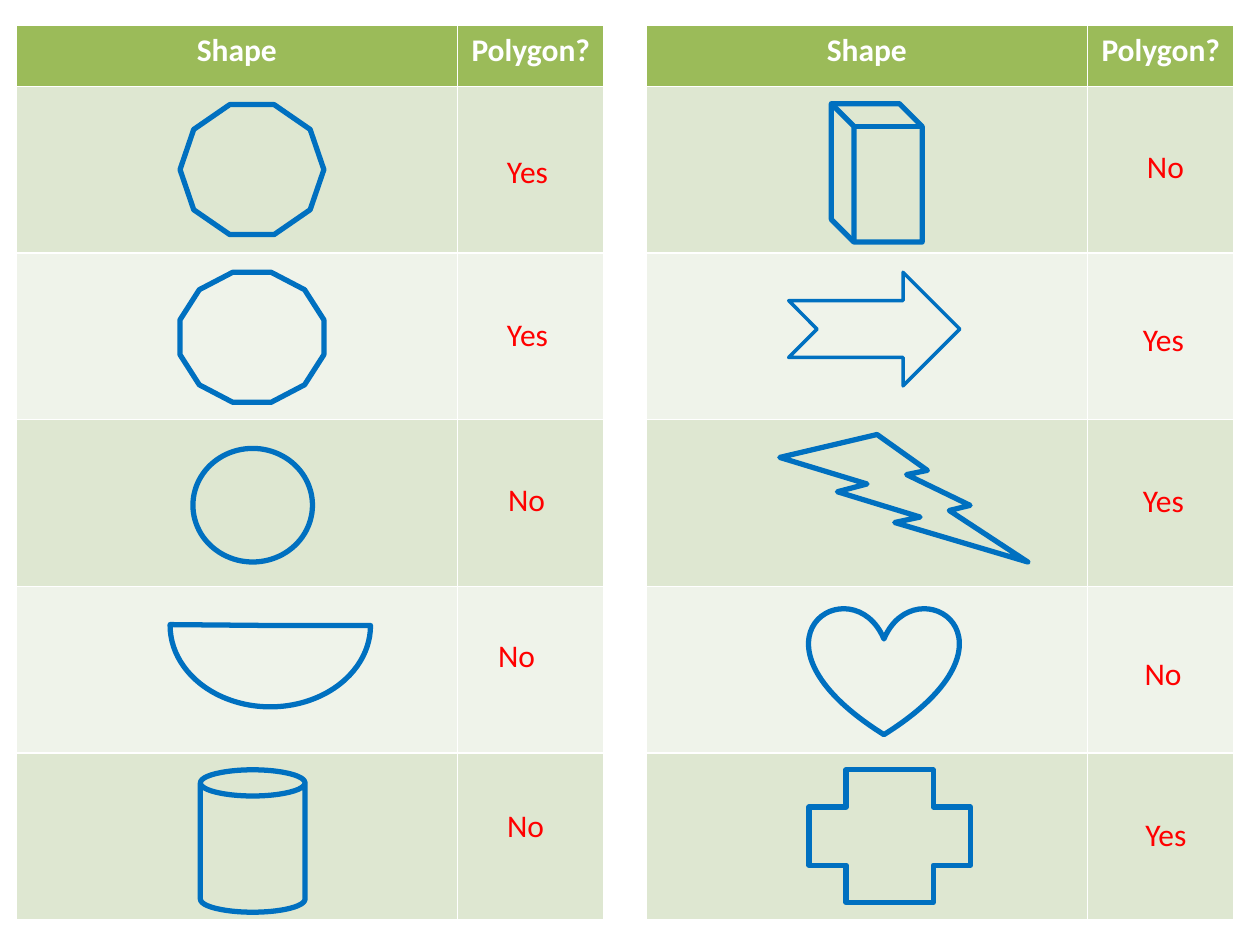
from dataclasses import dataclass

from pptx import Presentation
from pptx.dml.color import RGBColor as Rgb
from pptx.enum.shapes import MSO_SHAPE as Preset
from pptx.enum.text import MSO_AUTO_SIZE as AutoSize, PP_ALIGN as Align
from pptx.slide import Slide
from pptx.util import Cm, Pt


@dataclass(frozen=True)
class Theme:
    font: str = "Calibri"
    text_size: Pt = Pt(18)
    header_fill: Rgb = Rgb(0x9B, 0xBB, 0x59)
    header_text: Rgb = Rgb(0xFF, 0xFF, 0xFF)
    band_fills: tuple = (Rgb(0xDE, 0xE7, 0xD1), Rgb(0xEF, 0xF3, 0xEA))
    outline: Rgb = Rgb(0x00, 0x70, 0xC0)
    answer_text: Rgb = Rgb(0xFF, 0x00, 0x00)


@dataclass(frozen=True)
class Figure:
    """An outlined shape; lengths in centimetres, line in points."""
    preset: Preset
    left: float
    top: float
    width: float
    height: float
    line: float = 3
    rotation: float = 0
    adjustments: tuple = ()


@dataclass(frozen=True)
class Answer:
    """A Yes/No label; lengths in centimetres."""
    text: str
    left: float
    top: float


THEME = Theme()
HEADERS = ("Shape", "Polygon?")
TABLE_LEFTS = (0.33, 13.03)
TABLE_TOP = 0.51
COLUMN_WIDTHS = (8.89, 2.96)
ROW_HEIGHTS = (1.23,) + (3.36,) * 5
ANSWER_WIDTHS = {"Yes": 1.35, "No": 1.27}
ANSWER_HEIGHT = 1.02

FIGURES = (
    # Left table
    Figure(Preset.DECAGON, 3.63, 2.11, 2.9, 2.62),
    Figure(Preset.DODECAGON, 3.63, 5.49, 2.9, 2.62),
    Figure(Preset.OVAL, 3.89, 9.04, 2.41, 2.29),
    Figure(Preset.PIE, 3.43, 10.97, 4.04, 3.28, adjustments=(0, 108.3)),
    Figure(Preset.CAN, 4.04, 15.52, 2.11, 2.87),
    # Right table
    Figure(Preset.CUBE, 16.28, 2.57, 2.79, 1.83, rotation=270),
    Figure(Preset.NOTCHED_RIGHT_ARROW, 15.9, 5.49, 3.45, 2.29, line=2),
    Figure(Preset.LIGHTNING_BOLT, 15.72, 8.76, 5, 2.57),
    Figure(Preset.HEART, 16.31, 12.24, 3.02, 2.57),
    Figure(Preset.CROSS, 16.31, 15.52, 3.25, 2.67, adjustments=(0.28,)),
)

ANSWERS = (
    # Left table
    Answer("Yes", 9.96, 2.95),
    Answer("Yes", 9.96, 6.22),
    Answer("No", 9.98, 9.55),
    Answer("No", 9.78, 12.7),
    Answer("No", 9.96, 16.13),
    # Right table
    Answer("No", 22.86, 2.84),
    Answer("Yes", 22.78, 6.32),
    Answer("Yes", 22.78, 9.58),
    Answer("No", 22.81, 13.06),
    Answer("Yes", 22.83, 16.31),
)


def write_centred(text_frame, text: str, color: Rgb, bold: bool = False) -> None:
    paragraph = text_frame.paragraphs[0]
    paragraph.alignment = Align.CENTER
    run = paragraph.add_run()
    run.text = text
    run.font.name = THEME.font
    run.font.size = THEME.text_size
    run.font.bold = bold
    run.font.color.rgb = color


def draw_table(slide: Slide, left: float) -> None:
    table = slide.shapes.add_table(
        len(ROW_HEIGHTS), len(COLUMN_WIDTHS), Cm(left), Cm(TABLE_TOP),
        Cm(sum(COLUMN_WIDTHS)), Cm(sum(ROW_HEIGHTS))).table
    for column, width in zip(table.columns, COLUMN_WIDTHS):
        column.width = Cm(width)
    for index, (row, height) in enumerate(zip(table.rows, ROW_HEIGHTS)):
        row.height = Cm(height)
        for cell, header in zip(row.cells, HEADERS):
            cell.fill.solid()
            if index == 0:
                cell.fill.fore_color.rgb = THEME.header_fill
                write_centred(cell.text_frame, header, THEME.header_text, bold=True)
            else:
                cell.fill.fore_color.rgb = THEME.band_fills[(index - 1) % 2]


def draw_figure(slide: Slide, figure: Figure) -> None:
    shape = slide.shapes.add_shape(
        figure.preset, Cm(figure.left), Cm(figure.top),
        Cm(figure.width), Cm(figure.height))
    for index, value in enumerate(figure.adjustments):
        shape.adjustments[index] = value
    shape.rotation = figure.rotation
    shape.shadow.inherit = False
    shape.fill.background()
    shape.line.color.rgb = THEME.outline
    shape.line.width = Pt(figure.line)


def draw_answer(slide: Slide, answer: Answer) -> None:
    box = slide.shapes.add_textbox(
        Cm(answer.left), Cm(answer.top),
        Cm(ANSWER_WIDTHS[answer.text]), Cm(ANSWER_HEIGHT))
    box.text_frame.word_wrap = False
    box.text_frame.auto_size = AutoSize.SHAPE_TO_FIT_TEXT
    write_centred(box.text_frame, answer.text, THEME.answer_text)


def main() -> None:
    presentation = Presentation()
    presentation.slide_width = Cm(25.4)
    presentation.slide_height = Cm(19.05)
    # The slide has no title, so it uses the blank layout
    slide = presentation.slides.add_slide(presentation.slide_layouts[6])

    for left in TABLE_LEFTS:
        draw_table(slide, left)
    for figure in FIGURES:
        draw_figure(slide, figure)
    for answer in ANSWERS:
        draw_answer(slide, answer)

    presentation.save("out.pptx")


if __name__ == "__main__":
    main()
